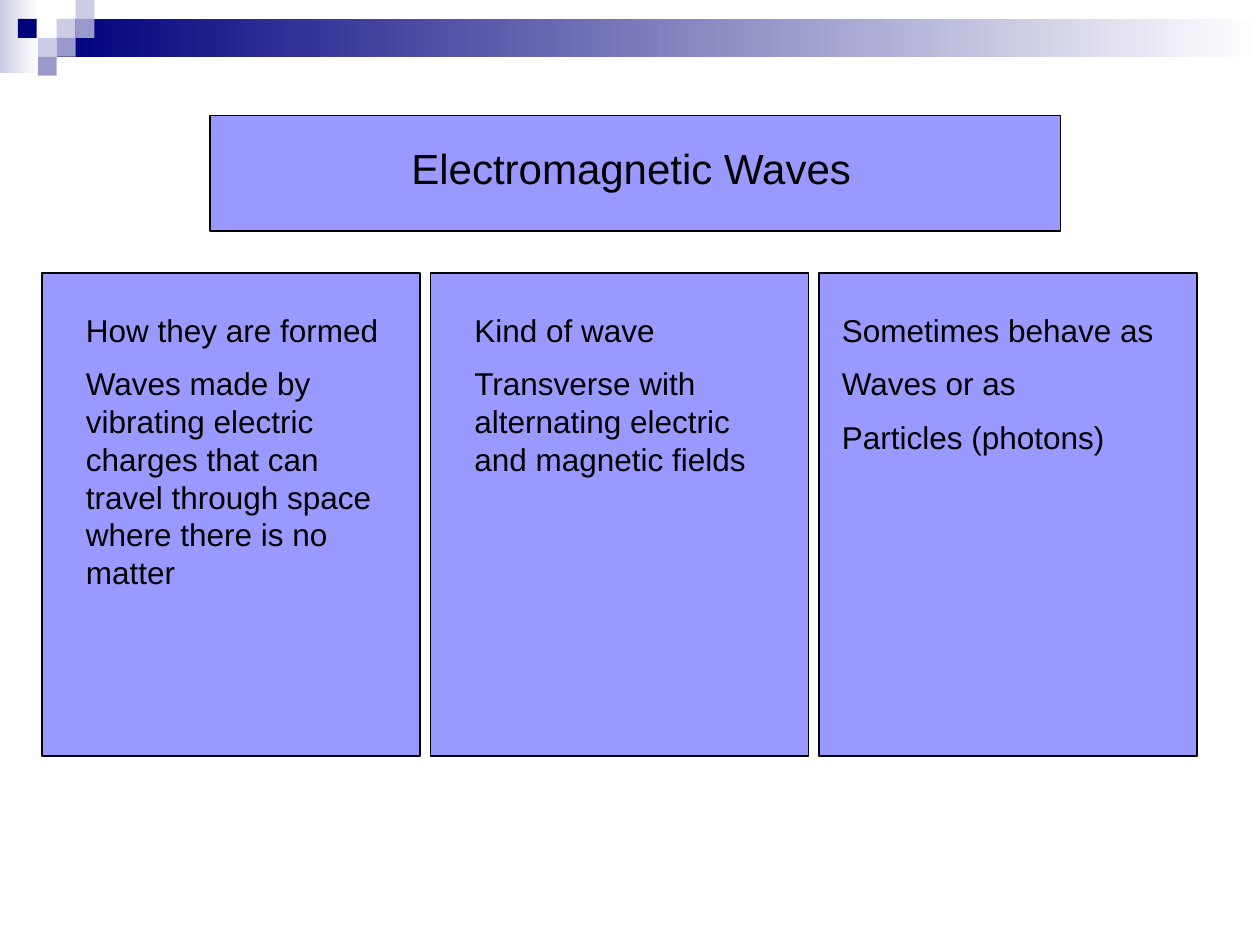
from pptx import Presentation
from pptx import util as u
from pptx.dml.color import RGBColor
from pptx.enum import shapes, text

PX = 914400 // 120  # 120 px to the inch
FONT, BLACK, PANEL = "Arial", "000000", "9999FF"
NAVY, LILAC, MAUVE, WHITE = "00007D", "CCCCE6", "9999CC", "FFFFFF"

# Content
TITLE = "Electromagnetic Waves"
# paragraphs, text inset from the panel's left side, text width, text height
COLUMNS = [
    (["How they are formed",
      "Waves made by vibrating electric charges that can travel through "
      "space where there is no matter"], 30, 310, 282),
    (["Kind of wave",
      "Transverse with alternating electric and magnetic fields"], 30, 320, 174),
    (["Sometimes behave as", "Waves or as", "Particles (photons)"], 10, 340, 156),
]

# Header decoration: gradient bands, then squares as (left, row, colour)
BANDS = [((0, 0, 37, 70), LILAC), ((54, 18, 1146, 36), NAVY)]
SQUARE = 18
SQUARES = [(54, 1, LILAC), (72, 0, LILAC), (72, 1, MAUVE), (36, 2, LILAC),
           (17, 1, NAVY), (54, 2, MAUVE), (36, 3, MAUVE)]

# Layout
COLUMN_LEFT, COLUMN_TOP, COLUMN_W, COLUMN_H, COLUMN_GAP = 40, 260, 360, 460, 10
TEXT_DROP = 30


def rgb(value):
    return RGBColor.from_string(value)


def emu(box):
    return [round(v * PX) for v in box]


def add_rect(slide, box, fill, fade_to=None, outline=None):
    rect = slide.shapes.add_shape(shapes.MSO_SHAPE.RECTANGLE, *emu(box))
    rect.shadow.inherit = False
    if fade_to:
        rect.fill.gradient()
        rect.fill.gradient_angle = 0
        for stop, colour, place in zip(rect.fill.gradient_stops, (fill, fade_to), (0, 1)):
            stop.color.rgb = rgb(colour)
            stop.position = place
    else:
        rect.fill.solid()
        rect.fill.fore_color.rgb = rgb(fill)
    if outline:
        rect.line.color.rgb = rgb(outline)
        rect.line.width = u.Pt(0.75)
    else:
        rect.line.fill.background()


def add_text(slide, box, paragraphs, size):
    frame = slide.shapes.add_textbox(*emu(box)).text_frame
    frame.word_wrap = True
    frame.auto_size = text.MSO_AUTO_SIZE.SHAPE_TO_FIT_TEXT
    for i, words in enumerate(paragraphs):
        paragraph = frame.add_paragraph() if i else frame.paragraphs[0]
        if i:
            paragraph.space_before = u.Pt(size / 2)
        run = paragraph.add_run()
        run.text = words
        run.font.name = FONT
        run.font.size = u.Pt(size)
        run.font.color.rgb = rgb(BLACK)


def main():
    deck = Presentation()
    deck.slide_width, deck.slide_height = emu((1200, 900))
    slide = deck.slides.add_slide(deck.slide_layouts[6])

    # Header decoration
    for box, colour in BANDS:
        add_rect(slide, box, colour, fade_to=WHITE)
    for left, row, colour in SQUARES:
        add_rect(slide, (left, row * SQUARE, SQUARE, SQUARE), colour)

    # Title
    add_rect(slide, (200, 110, 810, 110), PANEL, outline=BLACK)
    add_text(slide, (380, 130, 600, 60), [TITLE], 24)

    # Columns
    for i, (paragraphs, inset, width, height) in enumerate(COLUMNS):
        left = COLUMN_LEFT + i * (COLUMN_W + COLUMN_GAP)
        add_rect(slide, (left, COLUMN_TOP, COLUMN_W, COLUMN_H), PANEL, outline=BLACK)
        add_text(slide, (left + inset, COLUMN_TOP + TEXT_DROP, width, height),
                 paragraphs, 18)

    deck.save("out.pptx")


if __name__ == "__main__":
    main()
